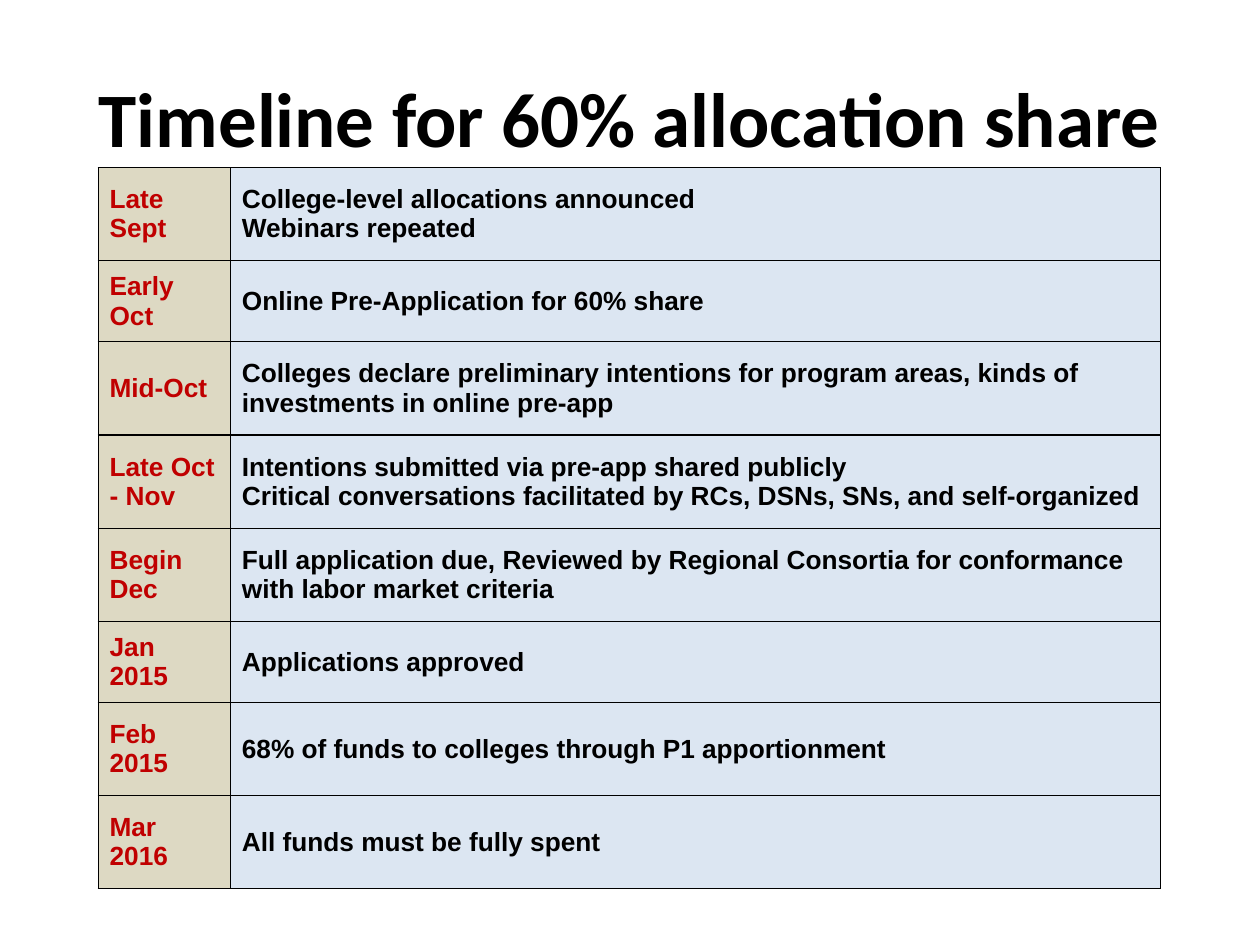
from lxml import etree
from pptx import Presentation
from pptx.dml.color import RGBColor
from pptx.enum import text
from pptx.oxml import ns
from pptx.util import Inches, Pt

BLACK = RGBColor(0x00, 0x00, 0x00)
RED = RGBColor(0xC0, 0x00, 0x00)
TAN = RGBColor(0xDD, 0xD9, 0xC3)
BLUE = RGBColor(0xDC, 0xE6, 0xF2)

TALL, SHORT = 0.74, 0.46
COLS = [(1.05, RED, TAN), (7.38, BLACK, BLUE)]  # width, text, fill
STEPS = [
    (TALL, "Late Sept", "College-level allocations announced\vWebinars repeated"),
    (SHORT, "Early Oct", "Online Pre-Application for 60% share"),
    (TALL, "Mid-Oct", "Colleges declare preliminary intentions for program areas, "
                      "kinds of investments in online pre-app"),
    (TALL, "Late Oct - Nov", "Intentions submitted via pre-app shared publicly\n"
                             "Critical conversations facilitated by RCs, DSNs, SNs, "
                             "and self-organized"),
    (TALL, "Begin Dec", "Full application due, Reviewed by Regional Consortia for "
                        "conformance with labor market criteria"),
    (SHORT, "Jan 2015", "Applications approved"),
    (TALL, "Feb 2015", "68% of funds to colleges through P1 apportionment"),
    (TALL, "Mar 2016", "All funds must be fully spent"),
]


def style(frame, face, size, color, align):
    for para in frame.paragraphs:
        para.alignment = align
        for run in para.runs:
            font = run.font
            font.name, font.size, font.bold = face, Pt(size), True
            font.color.rgb = color


def add_title(slide, words):
    title = slide.shapes.title
    title.left, title.top = Inches(0.5), Inches(0.3)
    title.width, title.height = Inches(9), Inches(1.25)
    frame = title.text_frame
    frame.text = words
    frame.vertical_anchor = text.MSO_ANCHOR.MIDDLE
    style(frame, "Calibri", 44, BLACK, text.PP_ALIGN.CENTER)


def add_border(cell):
    """Draw thin black lines on all four sides; call before the fill is set."""
    props = cell._tc.get_or_add_tcPr()
    for side in ("lnL", "lnR", "lnT", "lnB"):
        line = etree.SubElement(props, ns.qn("a:" + side), w=str(Pt(0.75)))
        fill = etree.SubElement(line, ns.qn("a:solidFill"))
        etree.SubElement(fill, ns.qn("a:srgbClr"), val=str(BLACK))


def fill_cell(cell, words, color, back):
    cell.text = words
    cell.vertical_anchor = text.MSO_ANCHOR.MIDDLE
    cell.margin_left = cell.margin_right = Inches(0.09)
    cell.margin_top = cell.margin_bottom = Inches(0.09)
    add_border(cell)
    cell.fill.solid()
    cell.fill.fore_color.rgb = back
    style(cell.text_frame, "Arial", 15, color, text.PP_ALIGN.LEFT)


def add_steps(slide):
    height = Inches(5.79)
    shape = slide.shapes.add_table(len(STEPS), len(COLS), Inches(0.78),
                                   Inches(1.33), Inches(8.44), height)
    table = shape.table
    table.first_row = table.horz_banding = False
    for col, (width, _, _) in zip(table.columns, COLS):
        col.width = Inches(width)
    for row, (tall, *words) in zip(table.rows, STEPS):
        row.height = Inches(tall)
        for cell, word, (_, color, back) in zip(row.cells, words, COLS):
            fill_cell(cell, word, color, back)
    shape.height = height


def main():
    deck = Presentation()
    deck.slide_width, deck.slide_height = Inches(10), Inches(7.5)
    slide = deck.slides.add_slide(deck.slide_layouts[5])
    add_title(slide, "Timeline for 60% allocation share")
    add_steps(slide)
    deck.save("out.pptx")


if __name__ == "__main__":
    main()
